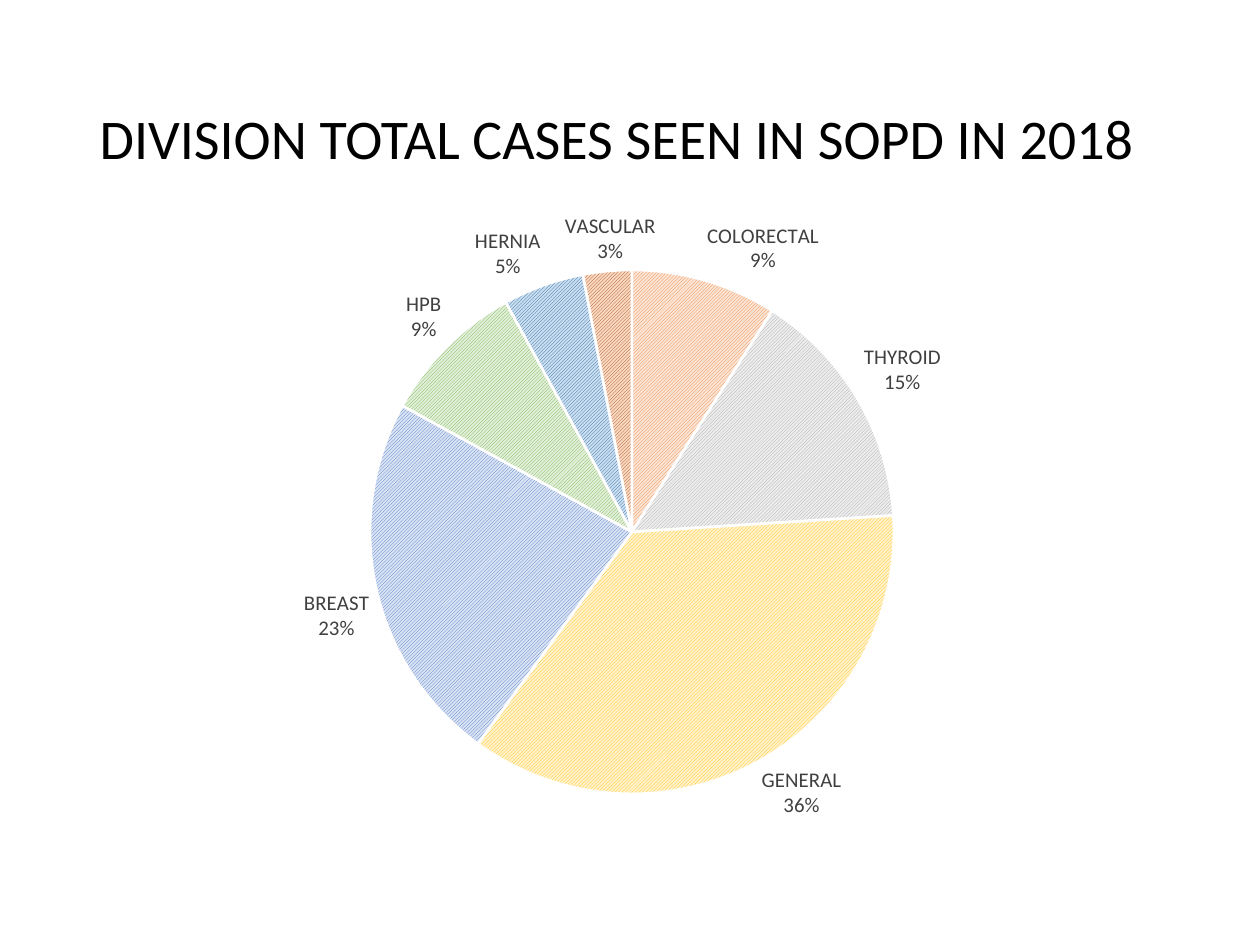
from copy import deepcopy

from pptx import Presentation
from pptx.chart.data import CategoryChartData
from pptx.dml.color import RGBColor
from pptx.enum.chart import XL_CHART_TYPE, XL_LABEL_POSITION
from pptx.enum.dml import MSO_PATTERN
from pptx.enum.text import MSO_ANCHOR, PP_ALIGN
from pptx.oxml import parse_xml
from pptx.oxml.ns import nsdecls, qn
from pptx.util import Pt

TITLE = "DIVISION TOTAL CASES SEEN IN SOPD IN 2018"
CASES = [
    ("", None, "sky"),
    ("COLORECTAL", 9, "orange"),
    ("THYROID", 15, "gray"),
    ("GENERAL", 36, "gold"),
    ("BREAST", 23, "blue"),
    ("HPB", 9, "green"),
    ("HERNIA", 5, "navy"),
    ("VASCULAR", 3, "brown"),
]
HATCH = {
    "sky": ("5B9BD5", "DEEBF7"),
    "orange": ("ED7D31", "FBE5D6"),
    "gray": ("A5A5A5", "EDEDED"),
    "gold": ("FFC000", "FFF2CC"),
    "blue": ("4472C4", "DAE3F3"),
    "green": ("70AD47", "E2F0D9"),
    "navy": ("255E91", "CBDFF2"),
    "brown": ("9E480E", "FAD8C1"),
}
COLORS = {"title": "000000", "label": "404040", "edge": "FFFFFF"}
FONT = "Calibri"
PX = 914400 / 126
HEAD = (87, 50, 1086, 183)
CHART = (87, 195, 1086, 655)
PIE = (370, 270, 524, 524)
SHIFT = {"VASCULAR": 49}


def emu(box):
    return [round(n * PX) for n in box]


def rgb(code):
    return RGBColor.from_string(code)


def style(font, size, color):
    font.name, font.size, font.bold = FONT, Pt(size), False
    font.color.rgb = rgb(color)


def write(shape, text, size, color, align=PP_ALIGN.LEFT, space=0.9):
    frame = shape.text_frame
    frame.word_wrap = True
    frame.vertical_anchor = MSO_ANCHOR.MIDDLE
    para = frame.paragraphs[0]
    para.alignment, para.line_spacing = align, space
    run = para.add_run()
    run.text = text
    style(run.font, size, color)


def layout(**parts):
    items = "".join(f'<c:{key} val="{val}"/>' for key, val in parts.items())
    return parse_xml(f'<c:layout {nsdecls("c")}><c:manualLayout>{items}</c:manualLayout></c:layout>')


def place(chart):
    left, top, wide, high = CHART
    x, y, w, h = PIE
    area = chart._chartSpace.chart.plotArea
    for old in area.findall(qn("c:layout")):
        area.remove(old)
    area.insert(0, layout(
        layoutTarget="inner", xMode="edge", yMode="edge",
        x=(x - left) / wide, y=(y - top) / high, w=w / wide, h=h / high))


def label(series):
    tags = series.data_labels
    tags.show_category_name = tags.show_percentage = True
    tags.show_value = False
    tags.number_format, tags.number_format_is_linked = "0%", False
    tags.position = XL_LABEL_POSITION.OUTSIDE_END
    style(tags.font, 11.9, COLORS["label"])
    root = tags._element
    last = root.find(qn("c:showBubbleSize"))
    last.addnext(parse_xml(f'<c:separator {nsdecls("c")}>\n</c:separator>'))
    lead = root.find(qn("c:showLeaderLines"))
    if lead is not None:
        lead.set("val", "0")
    parts = [part for part in root if part is not lead]
    names = [name for name, _, _ in CASES]
    for i, (name, move) in enumerate(SHIFT.items()):
        tag = parse_xml(f'<c:dLbl {nsdecls("c")}><c:idx val="{names.index(name)}"/></c:dLbl>')
        tag.append(layout(x=move / CHART[2], y=0))
        tag.extend([deepcopy(part) for part in parts])
        root.insert(i, tag)


def draw(slide):
    data = CategoryChartData()
    data.categories = [name for name, _, _ in CASES]
    data.add_series("Series 1", [count for _, count, _ in CASES] + [None])
    chart = slide.shapes.add_chart(XL_CHART_TYPE.PIE, *emu(CHART), data).chart
    chart.has_legend = chart.has_title = False
    style(chart.font, 10, COLORS["title"])
    chart.plots[0].vary_by_categories = True
    series = chart.plots[0].series[0]
    for i, (_, _, hue) in enumerate(CASES):
        form = series.points[i].format
        form.fill.patterned()
        form.fill.pattern = MSO_PATTERN.LIGHT_UPWARD_DIAGONAL
        front, back = HATCH[hue]
        form.fill.fore_color.rgb = rgb(front)
        form.fill.back_color.rgb = rgb(back)
        form.line.color.rgb = rgb(COLORS["edge"])
        form.line.width = Pt(1.5)
    label(series)
    place(chart)


def main():
    deck = Presentation()
    deck.slide_width, deck.slide_height = emu((1260, 945))
    slide = deck.slides.add_slide(deck.slide_layouts[5])
    title = slide.shapes.title
    title.left, title.top, title.width, title.height = emu(HEAD)
    write(title, TITLE, size=32, color=COLORS["title"])
    draw(slide)
    deck.save("out.pptx")


if __name__ == "__main__":
    main()
